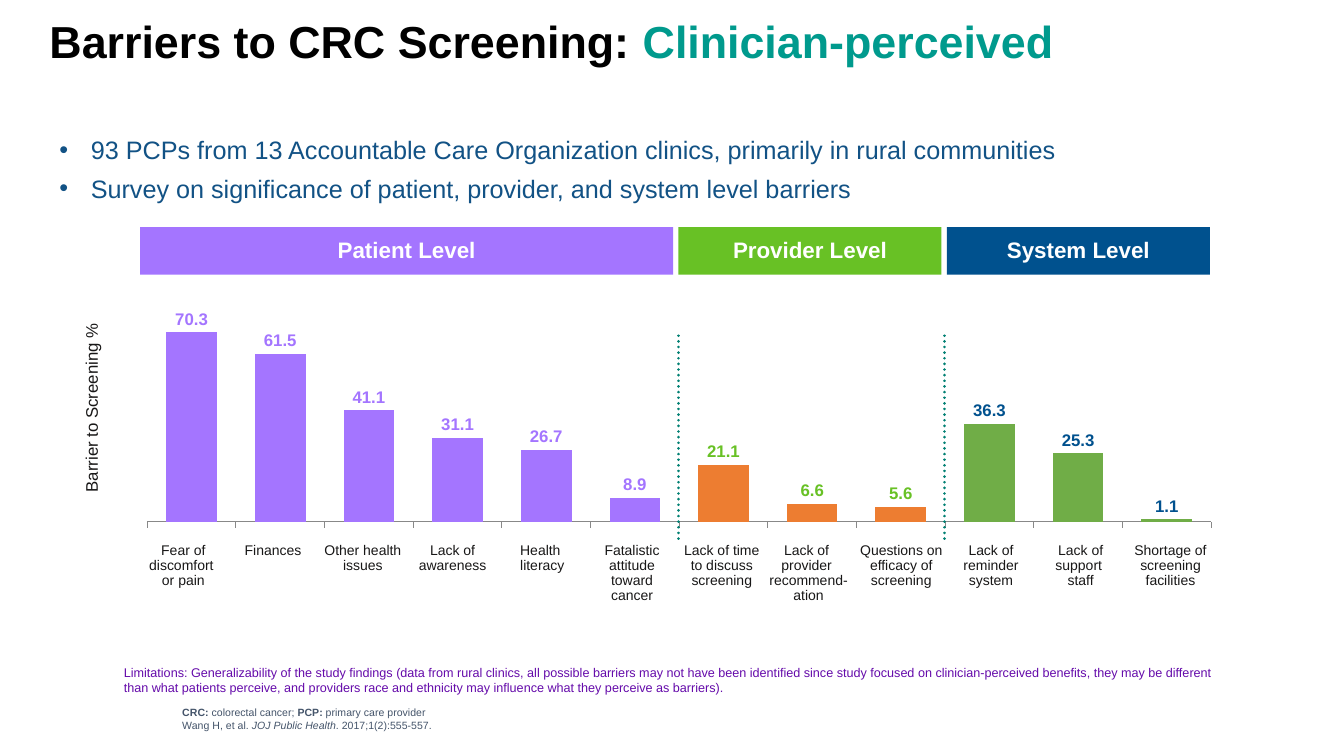
"""Build the slide on clinician-perceived barriers to CRC screening."""
from lxml.etree import SubElement
from pptx import Presentation
from pptx.chart.data import CategoryChartData
from pptx.dml.color import RGBColor
from pptx.enum.chart import XL_CHART_TYPE, XL_LABEL_POSITION, XL_TICK_LABEL_POSITION, XL_TICK_MARK
from pptx.enum.dml import MSO_LINE
from pptx.enum.shapes import MSO_CONNECTOR, MSO_SHAPE
from pptx.enum.text import MSO_ANCHOR, MSO_AUTO_SIZE, PP_ALIGN
from pptx.oxml import parse_xml
from pptx.oxml.ns import nsdecls, qn
from pptx.util import Pt

COLORS = {
    "black": "000000", "white": "FFFFFF", "teal": "009A8D", "divider": "008073",
    "patient": "A475FF", "provider": "68C125", "system": "00518E",
    "provider bar": "ED7D31", "system bar": "70AD47", "axis": "888888",
    "label": "181717", "bullet": "125285", "limitations": "650BAA", "source": "44546A",
}


def format_font(font, size, color, bold=False, italic=False):
    font.name = "Arial"
    font.size = Pt(size)
    font.bold = bold
    font.italic = italic
    font.color.rgb = RGBColor.from_string(COLORS[color])


def add_text(left, top, width, height, text, size, color, align=PP_ALIGN.LEFT):
    shape = slide.shapes.add_textbox(Pt(left), Pt(top), Pt(width), Pt(height))
    shape.text_frame.word_wrap = True
    shape.text_frame.text = text
    for paragraph in shape.text_frame.paragraphs:
        paragraph.alignment = align
        for run in paragraph.runs:
            format_font(run.font, size, color)
    return shape


presentation = Presentation()
presentation.slide_width = Pt(960)
presentation.slide_height = Pt(540)
slide = presentation.slides.add_slide(presentation.slide_layouts[5])

title = slide.shapes.title
title.left, title.top, title.width, title.height = Pt(35.3), Pt(10), Pt(889), Pt(61)
title_frame = title.text_frame
title_frame.auto_size = MSO_AUTO_SIZE.NONE
title_frame.vertical_anchor = MSO_ANCHOR.TOP
title_frame.margin_left = title_frame.margin_right = 0
title_frame.margin_top = title_frame.margin_bottom = 0
title_paragraph = title_frame.paragraphs[0]
title_paragraph.alignment = PP_ALIGN.LEFT
for text, color in (("Barriers to CRC Screening: ", "black"), ("Clinician-perceived", "teal")):
    run = title_paragraph.add_run()
    run.text = text
    format_font(run.font, 32, color, bold=True)

bullets = add_text(
    35.3, 92.5, 889, 49,
    "93 PCPs from 13 Accountable Care Organization clinics, primarily in rural communities\n"
    "Survey on significance of patient, provider, and system level barriers",
    18, "bullet")
for paragraph in bullets.text_frame.paragraphs:
    paragraph.space_before = Pt(6)
    properties = paragraph._p.get_or_add_pPr()
    properties.set("marL", str(Pt(22.5)))
    properties.set("indent", str(-Pt(22.5)))
    SubElement(properties, qn("a:buFont"), typeface="Arial")
    SubElement(properties, qn("a:buChar"), char="•")

values = [70, 62, 41.1, 31.1, 26.7, 8.9, 21, 6.6, 5.6, 36.2, 25.3, 1]
stated_values = {0: "70.3", 1: "61.5", 6: "21.1", 9: "36.3", 11: "1.1"}
chart_data = CategoryChartData(number_format="#,##0.0")
chart_data.categories = [str(number) for number in range(1, len(values) + 1)]
chart_data.add_series("Series 1", values)
chart = slide.shapes.add_chart(
    XL_CHART_TYPE.COLUMN_CLUSTERED, Pt(92.7), Pt(205.8), Pt(783.4), Pt(174.2), chart_data).chart
chart.has_legend = False
chart.has_title = False
format_font(chart.font, 10, "black")
chart.value_axis.minimum_scale = 0
chart.value_axis.maximum_scale = 80
chart.value_axis.has_major_gridlines = False
chart.value_axis.visible = False
category_axis = chart.category_axis
category_axis.tick_label_position = XL_TICK_LABEL_POSITION.NONE
category_axis.major_tick_mark = XL_TICK_MARK.OUTSIDE
category_axis.format.line.color.rgb = RGBColor.from_string(COLORS["axis"])
category_axis.format.line.width = Pt(0.75)

plot = chart.plots[0]
plot.gap_width = 75
plot.overlap = -27
plot.vary_by_categories = False
series = plot.series[0]
series.format.fill.solid()
series.format.fill.fore_color.rgb = RGBColor.from_string(COLORS["patient"])
labels = series.data_labels
labels.show_value = True
labels.number_format = "#,##0.0"
labels.number_format_is_linked = False
labels.position = XL_LABEL_POSITION.OUTSIDE_END
format_font(labels.font, 12, "patient", bold=True)
for index in range(len(values)):
    level = "patient" if index < 6 else "provider" if index < 9 else "system"
    if level != "patient":
        fill = series.points[index].format.fill
        fill.solid()
        fill.fore_color.rgb = RGBColor.from_string(COLORS[level + " bar"])
    label = series.points[index].data_label
    if index in stated_values:
        label.text_frame.text = stated_values[index]
        format_font(label.text_frame.paragraphs[0].runs[0].font, 12, level, bold=True)
    else:
        format_font(label.font, 12, level, bold=True)
    label.position = XL_LABEL_POSITION.OUTSIDE_END

plot_area = chart._chartSpace.chart.plotArea
for old_layout in plot_area.findall(qn("c:layout")):
    plot_area.remove(old_layout)
plot_area.insert(0, parse_xml(
    f'<c:layout {nsdecls("c")}><c:manualLayout><c:layoutTarget val="inner"/>'
    '<c:xMode val="edge"/><c:yMode val="edge"/><c:x val="0.016"/><c:y val="0.07"/>'
    '<c:w val="0.97"/><c:h val="0.889"/></c:manualLayout></c:layout>'))

barriers = [
    "Fear of discomfort \vor pain", "Finances", "Other health issues", "Lack of awareness",
    "Health \vliteracy", "Fatalistic attitude toward cancer",
    "Lack of time to discuss screening", "Lack of \vprovider \vrecommend-ation",
    "Questions on efficacy of screening", "Lack of reminder system",
    "Lack of support \vstaff", "Shortage of screening facilities",
]
label_top, label_bottom = Pt(387.4), Pt(450.8)
for index, barrier in enumerate(barriers):
    extra = 4.3 if "recommend" in barrier else 0
    left, right = Pt(97.8 + 64.1 * index - extra), Pt(97.8 + 64.1 * (index + 1))
    builder = slide.shapes.build_freeform(left, label_top)
    builder.add_line_segments([(right, label_top), (right, label_bottom), (left, label_bottom)])
    barrier_label = builder.convert_to_shape()
    barrier_label.shadow.inherit = False
    barrier_label.fill.background()
    barrier_label.line.fill.background()
    frame = barrier_label.text_frame
    frame.word_wrap = True
    frame.vertical_anchor = MSO_ANCHOR.TOP
    frame.margin_left = Pt(2.9)
    frame.margin_top = frame.margin_right = frame.margin_bottom = Pt(0.7)
    frame.text = barrier
    paragraph = frame.paragraphs[0]
    paragraph.alignment = PP_ALIGN.CENTER
    paragraph.line_spacing = 0.9
    for run in paragraph.runs:
        format_font(run.font, 10, "label")

axis_title = add_text(-55.4, 278, 246.2, 26.6, "Barrier to Screening %", 12, "label",
                      PP_ALIGN.CENTER)
axis_title.rotation = 270

for left, width, text, color in (
    (100, 380.9, "Patient Level", "patient"),
    (484.6, 187.9, "Provider Level", "provider"),
    (676.3, 187.9, "System Level", "system"),
):
    header = slide.shapes.add_shape(MSO_SHAPE.RECTANGLE, Pt(left), Pt(162.2), Pt(width), Pt(34))
    header.shadow.inherit = False
    header.fill.solid()
    header.fill.fore_color.rgb = RGBColor.from_string(COLORS[color])
    header.line.fill.background()
    header.text_frame.text = text
    header.text_frame.vertical_anchor = MSO_ANCHOR.MIDDLE
    paragraph = header.text_frame.paragraphs[0]
    paragraph.alignment = PP_ALIGN.CENTER
    paragraph.line_spacing = 0.9
    format_font(paragraph.runs[0].font, 16, "white", bold=True)

for x in (484.6, 674.6):
    divider = slide.shapes.add_connector(
        MSO_CONNECTOR.STRAIGHT, Pt(x), Pt(239.8), Pt(x), Pt(387.4))
    divider.line.color.rgb = RGBColor.from_string(COLORS["divider"])
    divider.line.width = Pt(2)
    divider.line.dash_style = MSO_LINE.ROUND_DOT
    divider.line._get_or_add_ln().set("cap", "rnd")
    SubElement(divider._element.spPr, qn("a:effectLst"))

source = add_text(123.1, 500.9, 794.9, 25, "", 7.5, "source")
source_lines = (
    (("CRC: ", True, False), ("colorectal cancer; ", False, False),
     ("PCP:", True, False), (" primary care provider", False, False)),
    (("Wang H, et al. ", False, False), ("JOJ Public Health", False, True),
     (". 2017;1(2):555-557.", False, False)),
)
source.text_frame.text = "\n" * (len(source_lines) - 1)
for paragraph, pieces in zip(source.text_frame.paragraphs, source_lines):
    for text, bold, italic in pieces:
        run = paragraph.add_run()
        run.text = text
        format_font(run.font, 7.5, "source", bold, italic)

add_text(
    81.4, 471.6, 794.9, 28.8,
    "Limitations: Generalizability of the study findings (data from rural clinics, all possible "
    "barriers may not have been identified since study focused on clinician-perceived benefits, "
    "they may be different than what patients perceive, and providers race and ethnicity may "
    "influence what they perceive as barriers).",
    9, "limitations")

presentation.save("out.pptx")
